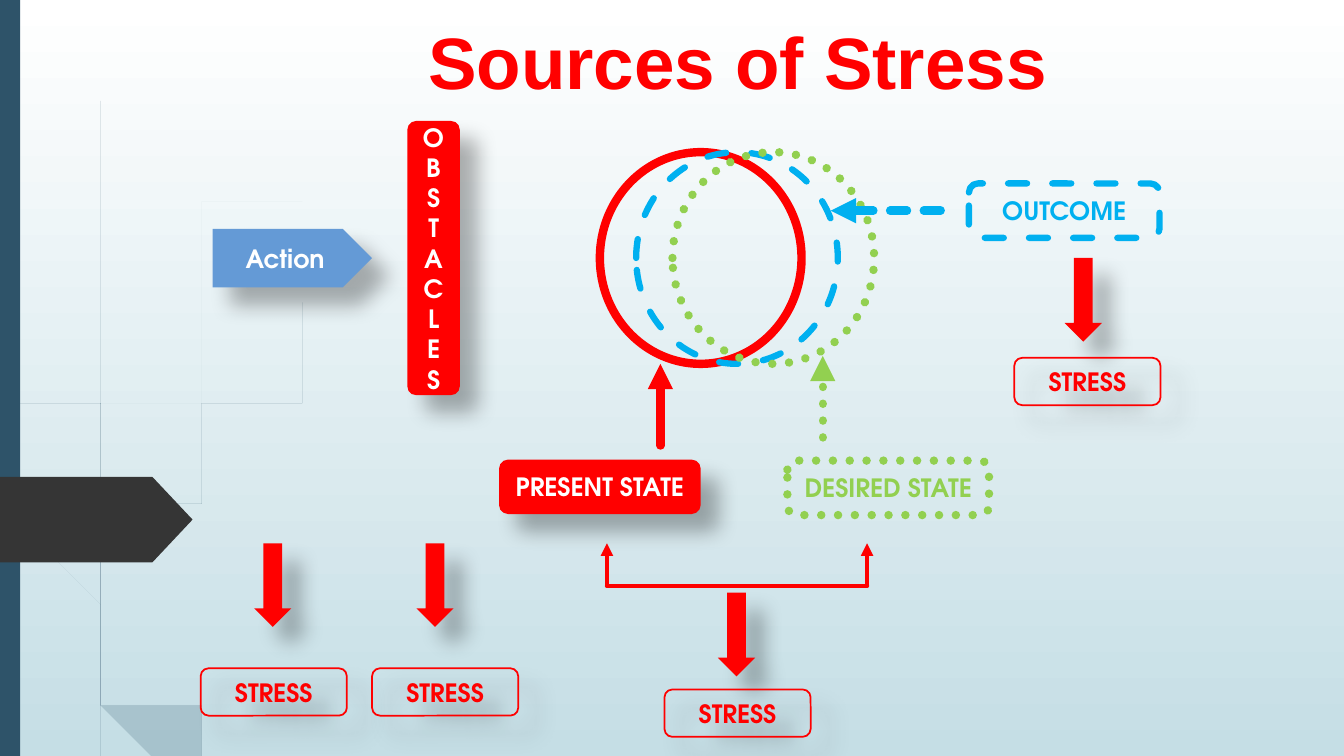
from lxml import etree
from pptx import Presentation
from pptx.dml.color import RGBColor
from pptx.enum.dml import MSO_LINE
from pptx.enum.shapes import MSO_CONNECTOR, MSO_SHAPE
from pptx.enum.text import MSO_ANCHOR, PP_ALIGN
from pptx.oxml.ns import qn
from pptx.util import Inches, Pt

RED = RGBColor(0xFF, 0x00, 0x00)
SKY = RGBColor(0x00, 0xB0, 0xF0)
GREEN = RGBColor(0x92, 0xD0, 0x50)
BLUE = RGBColor(0x64, 0x9A, 0xD6)
NAVY = RGBColor(0x2E, 0x53, 0x69)
CHARCOAL = RGBColor(0x35, 0x35, 0x35)
WHITE = RGBColor(0xFF, 0xFF, 0xFF)
MIST = RGBColor(0xC5, 0xDE, 0xE5)

DASH, DOT, SHORT_DASH = MSO_LINE.DASH, MSO_LINE.ROUND_DOT, MSO_LINE.SQUARE_DOT
RECT, ROUNDED = MSO_SHAPE.RECTANGLE, MSO_SHAPE.ROUNDED_RECTANGLE
PENTAGON, DOWN = MSO_SHAPE.PENTAGON, MSO_SHAPE.DOWN_ARROW
CIRCLE = MSO_SHAPE.FLOWCHART_CONNECTOR
STRAIGHT = MSO_CONNECTOR.STRAIGHT
MIDDLE, TOP, CENTER = MSO_ANCHOR.MIDDLE, MSO_ANCHOR.TOP, PP_ALIGN.CENTER
BODY_FONT, TITLE_FONT = "TeX Gyre Adventor", "Arial"

PALE_STRANDS = [
    ([(0, 2.99), (0.1, 3.44), (0.17, 3.76), (0.58, 5.22), (0.84, 5.99), (1.23, 6.94), (1.5, 7.5)],
     [(0, 2.82), (0.09, 3.22), (0.14, 3.45), (0.62, 5.2), (0.88, 5.96), (1.27, 6.92), (1.55, 7.5)]),
    ([(0.11, 3.5), (0.28, 4.7), (0.65, 6.21), (0.92, 6.93), (1.14, 7.5)],
     [(0.11, 3.5), (0.17, 3.76), (0.31, 4.69), (0.7, 6.19), (0.93, 6.83), (1.24, 7.5)]),
    ([(3.12, 1.53), (2.68, 1.97), (2.28, 2.44), (1.58, 3.48), (1.07, 4.61), (0.85, 5.84),
      (0.87, 6.46), (0.93, 6.83), (1.05, 7.11)],
     [(3.12, 1.54), (2.68, 1.98), (2.29, 2.45), (1.6, 3.49), (1.1, 4.62), (0.88, 5.84),
      (0.91, 6.46), (1.05, 7.11)]),
]
DARK_STRANDS = [
    ([(0.03, 0), (0.07, 1.1), (0.17, 2.33), (0.33, 3.55), (0.57, 4.77), (0.68, 5.57),
      (0.93, 6.59), (1.27, 7.5)],
     [(0.04, 0), (0.08, 1.09), (0.19, 2.32), (0.36, 3.55), (0.55, 4.53), (0.72, 5.56),
      (0.98, 6.57), (1.36, 7.5)]),
    ([(0.7, 1.41), (0.62, 1.93), (0.56, 2.45), (0.52, 3.49), (0.55, 4.49), (0.88, 5.92),
      (1.06, 6.45), (1.32, 7.08), (1.52, 7.5)],
     [(0.7, 1.41), (0.63, 1.93), (0.58, 2.45), (0.54, 3.49), (0.6, 4.72), (0.93, 5.9),
      (1.13, 6.49), (1.36, 7.06), (1.57, 7.5)]),
    ([(2.6, 3.44), (2.31, 3.73), (2.04, 4.05), (1.56, 4.74), (1.22, 5.51), (1.06, 6.31),
      (1.1, 6.91), (1.22, 7.19)],
     [(2.61, 3.44), (2.31, 3.74), (2.05, 4.06), (1.58, 4.76), (1.25, 5.52), (1.11, 6.33),
      (1.11, 6.56), (1.22, 7.19)]),
]


def add_child(parent, tag, **values):
    return etree.SubElement(parent, qn(tag), values)


def add_shadow(effects):
    shadow = add_child(effects, "a:outerShdw", blurRad=str(Pt(15)), dist=str(Pt(18)),
                       dir="2700000", algn="tl", rotWithShape="0")
    color = add_child(shadow, "a:srgbClr", val="000000")
    add_child(color, "a:alpha", val="30000")


def style_line(line, color, width, dash=None):
    line.color.rgb = color
    line.width = Pt(width)
    if dash:
        line.dash_style = dash
        line._ln.set("cap", "rnd")


def write_text(shape, text, color, size=18, font=BODY_FONT, anchor=MIDDLE, top=0):
    frame = shape.text_frame
    settings = {"word_wrap": True, "vertical_anchor": anchor, "margin_left": 0,
                "margin_right": 0, "margin_top": Inches(top), "margin_bottom": 0}
    for name, value in settings.items():
        setattr(frame, name, value)
    frame.text = text
    for para in frame.paragraphs:
        para.alignment = CENTER
        for span in para.runs:
            for name, value in {"size": Pt(size), "name": font, "bold": True}.items():
                setattr(span.font, name, value)
            span.font.color.rgb = color


def add_box(page, kind, box, fill=None, line=None, shadow=False, text="", color=WHITE):
    shape = page.shapes.add_shape(kind, *map(Inches, box))
    shape.shadow.inherit = False
    if fill is None:
        shape.fill.background()
    else:
        shape.fill.solid()
        shape.fill.fore_color.rgb = fill
    if line:
        style_line(shape.line, *line)
    else:
        shape.line.fill.background()
    if shadow:
        add_shadow(shape._element.spPr.find(qn("a:effectLst")))
    if text:
        write_text(shape, text, color)
    return shape


def add_line(page, start, end, color, width, dash=None, arrow=True):
    line = page.shapes.add_connector(STRAIGHT, *map(Inches, start + end))
    style_line(line.line, color, width, dash)
    line.line._ln.set("cap", "rnd")
    if arrow:
        add_child(line.line._ln, "a:tailEnd", type="triangle")
    add_child(line._element.spPr, "a:effectLst")


def smooth_curve(points, steps=8):
    padded = [points[0]] + points + [points[-1]]
    curve = []
    for a, b, c, d in zip(padded, padded[1:], padded[2:], padded[3:]):
        for step in range(steps):
            t = step / steps
            curve.append(tuple(
                q + t * (r - p) / 2 + t * t * (2 * p - 5 * q + 4 * r - s) / 2
                + t ** 3 * (3 * q - p - 3 * r + s) / 2
                for p, q, r, s in zip(a, b, c, d)))
    return curve + [points[-1]]


def draw_strand(page, left_edge, right_edge, alpha):
    outline = smooth_curve(left_edge) + smooth_curve(right_edge)[::-1]
    builder = page.shapes.build_freeform(*outline[0], scale=Inches(1))
    builder.add_line_segments(outline[1:], close=True)
    strand = builder.convert_to_shape()
    strand.shadow.inherit = False
    strand.fill.solid()
    strand.fill.fore_color.rgb = NAVY
    strand.line.fill.background()
    color = strand._element.spPr.find(qn("a:solidFill"))[0]
    add_child(color, "a:alpha", val=str(alpha * 1000))


def draw_backdrop(page, height):
    fill = page.background.fill
    fill.gradient()
    fill.gradient_angle = 270
    for stop, color in zip(fill.gradient_stops, (WHITE, MIST)):
        stop.color.rgb = color
    for strands, alpha in ((PALE_STRANDS, 20), (DARK_STRANDS, 100)):
        for left_edge, right_edge in strands:
            draw_strand(page, left_edge, right_edge, alpha)
    add_box(page, RECT, (0, 0, 0.2, height), NAVY)
    tag = add_box(page, PENTAGON, (0, 4.73, 1.91, 0.85), CHARCOAL)
    tag.adjustments[0] = 0.47


def draw_title(page, box):
    title = page.shapes.add_textbox(*map(Inches, box))
    write_text(title, "Sources of Stress", RED, 52, TITLE_FONT, TOP, 0.13)
    fill = title._element.find(".//" + qn("a:rPr") + "/" + qn("a:solidFill"))
    effects = etree.Element(qn("a:effectLst"))
    fill.addnext(effects)
    add_shadow(effects)


def draw_states(page, left, top):
    for index, line in enumerate(((RED, 6), (SKY, 4.5, DASH), (GREEN, 6, DOT))):
        add_box(page, CIRCLE, (left + 0.36 * index, top, 2, 2.1), line=line)
    add_box(page, ROUNDED, (left + 3.66, top + 0.31, 1.89, 0.54), line=(SKY, 4.5, DASH),
            text="OUTCOME", color=SKY)
    add_box(page, ROUNDED, (left + 1.86, top + 3.06, 2, 0.54), line=(GREEN, 6, DOT),
            text="DESIRED STATE", color=GREEN)
    add_box(page, ROUNDED, (left - 1, top + 3.05, 2, 0.54), RED, shadow=True,
            text="PRESENT STATE")
    add_line(page, (left + 0.6, top + 2.91), (left + 0.6, top + 2.1), RED, 6)
    add_line(page, (left + 2.21, top + 2.83), (left + 2.21, top + 2.02), GREEN, 6, DOT)
    add_line(page, (left + 3.38, top + 0.58), (left + 2.29, top + 0.58), SKY, 6, SHORT_DASH)


def draw_bracket(page, left, top, width, height):
    bottom = top + height
    add_line(page, (left, bottom), (left + width, bottom), RED, 3, arrow=False)
    for x in (left, left + width):
        add_line(page, (x, bottom), (x, top), RED, 3)


def draw_stress(page, arrow_left, arrow_top, label_left, label_top):
    add_box(page, DOWN, (arrow_left, arrow_top, 0.37, 0.83), RED, shadow=True)
    add_box(page, ROUNDED, (label_left, label_top, 1.45, 0.47), line=(RED, 1.25),
            shadow=True, text="STRESS", color=RED)


def main():
    deck = Presentation()
    deck.slide_width, deck.slide_height = Inches(13.33), Inches(7.5)
    page = deck.slides.add_slide(deck.slide_layouts[6])
    draw_backdrop(page, 7.5)
    draw_title(page, (2.37, 0.04, 9.89, 0.93))
    add_box(page, PENTAGON, (2.11, 2.27, 1.58, 0.58), BLUE, shadow=True, text="Action")
    add_box(page, ROUNDED, (4.04, 1.2, 0.52, 2.72), RED, shadow=True,
            text="\n".join("OBSTACLES"))
    draw_states(page, 5.95, 1.51)
    draw_bracket(page, 6.02, 5.39, 2.58, 0.42)
    for place in ((2.52, 5.39, 1.99, 6.63), (4.13, 5.39, 3.69, 6.63),
                  (7.12, 5.88, 6.59, 6.84), (10.56, 2.56, 10.06, 3.55)):
        draw_stress(page, *place)
    deck.save("out.pptx")


if __name__ == "__main__":
    main()
